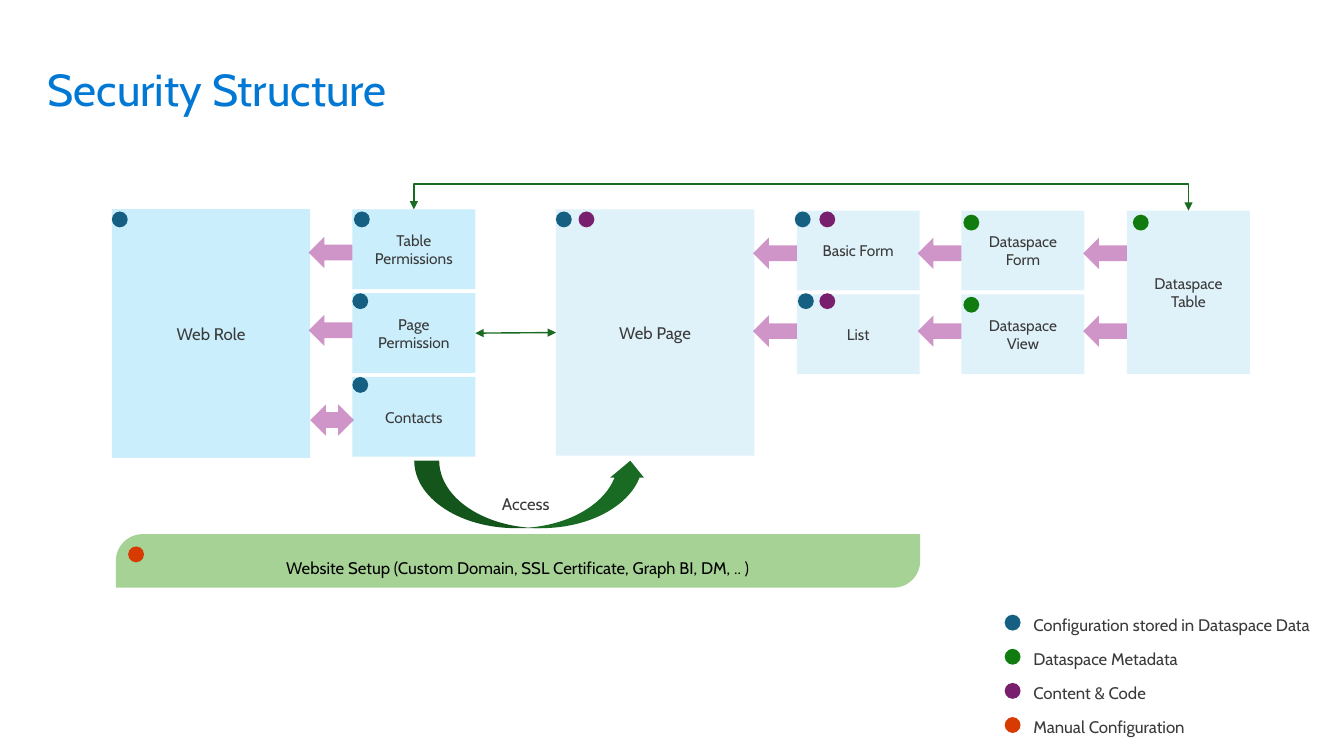
from dataclasses import dataclass

from lxml.etree import SubElement
from pptx import Presentation
from pptx.dml.color import RGBColor
from pptx.enum.shapes import MSO_CONNECTOR as Line, MSO_SHAPE as Preset
from pptx.enum.text import MSO_ANCHOR as Anchor, PP_ALIGN as Align
from pptx.oxml.ns import qn
from pptx.util import Cm, Pt


@dataclass(frozen=True)
class Theme:
    font: str = "Cabin"
    title: str = "0078D4"
    text: str = "3A3A3A"
    black: str = "000000"
    role: str = "CAEEFB"
    page: str = "C1E5F5"
    arrow: str = "A02B93"
    link: str = "196B24"
    setup: str = "4EA72E"
    title_size: int = 32
    large_size: int = 12
    small_size: int = 11


THEME = Theme()

TITLE = "Security Structure"
ACCESS = "Access"
SETUP = "Website Setup (Custom Domain, SSL Certificate, Graph BI, DM, .. )"

# Kind of storage: (dot colour, legend label)
STORAGE = {
    "data": ("156082", "Configuration stored in Dataspace Data"),
    "metadata": ("107C10", "Dataspace Metadata"),
    "content": ("78206E", "Content & Code"),
    "manual": ("D83B01", "Manual Configuration"),
}

# Lengths are in centimetres
SMALL_WIDTH, SMALL_HEIGHT, ROW_PITCH = 3.1, 2.01, 2.11
LARGE_WIDTH = 5.0
ROLE_TOP, PAGE_TOP = 5.28, 5.31
PERMISSION_X, FORM_X, SOURCE_X, TABLE_X = 8.88, 20.08, 24.23, 28.4
DOT = 0.4
ARROW_WIDTH, ARROW_HEIGHT = 1.1, 0.79

# Label, left, top, width, height, dots as (storage, right shift, down shift)
ROLE_BOXES = [
    ("Web Role", 2.82, 5.27, LARGE_WIDTH, 6.27, [("data", 0, 0.06)]),
    ("Table Permissions", PERMISSION_X, ROLE_TOP, SMALL_WIDTH, SMALL_HEIGHT,
     [("data", 0.04, 0.05)]),
    ("Page Permission", PERMISSION_X, ROLE_TOP + ROW_PITCH, SMALL_WIDTH, SMALL_HEIGHT,
     [("data", 0, 0)]),
    ("Contacts", PERMISSION_X, ROLE_TOP + 2 * ROW_PITCH, SMALL_WIDTH, SMALL_HEIGHT,
     [("data", 0, 0)]),
]
PAGE_BOXES = [
    ("Web Page", 14.01, ROLE_TOP, LARGE_WIDTH, 6.2,
     [("data", 0, 0.05), ("content", 0.57, 0.05)]),
    ("Basic Form", FORM_X, PAGE_TOP, SMALL_WIDTH, SMALL_HEIGHT,
     [("data", -0.05, 0.02), ("content", 0.57, 0.02)]),
    ("List", FORM_X, PAGE_TOP + ROW_PITCH, SMALL_WIDTH, SMALL_HEIGHT,
     [("data", 0.03, -0.03), ("content", 0.57, -0.03)]),
    ("Dataspace Form", SOURCE_X, PAGE_TOP, SMALL_WIDTH, SMALL_HEIGHT,
     [("metadata", 0.05, 0.1)]),
    ("Dataspace View", SOURCE_X, PAGE_TOP + ROW_PITCH, SMALL_WIDTH, SMALL_HEIGHT,
     [("metadata", 0.05, 0.06)]),
    ("Dataspace Table", TABLE_X, PAGE_TOP, SMALL_WIDTH, ROW_PITCH + SMALL_HEIGHT,
     [("metadata", 0.15, 0.1)]),
]
# Left edge of the box an arrow leaves, and the tops of its arrows
ARROWS = [
    (PERMISSION_X, (5.97, 7.93)),
    (FORM_X, (5.99, 7.95)),
    (SOURCE_X, (5.99, 7.95)),
    (TABLE_X, (5.99, 7.95)),
]
CONTACTS_ARROW_TOP = 10.19
SETUP_X, SETUP_Y, SETUP_WIDTH, SETUP_HEIGHT = 2.92, 13.46, 20.27, 1.35
LEGEND_X, LEGEND_Y, LEGEND_PITCH = 25.32, 15.49, 0.86
LINK_RISE = 0.64


def format_text(frame, text, size, color, align=Align.LEFT, anchor=Anchor.TOP, margins=(0, 0)):
    frame.text = text
    frame.word_wrap = True
    frame.vertical_anchor = anchor
    frame.margin_left = frame.margin_right = Cm(margins[0])
    frame.margin_top = frame.margin_bottom = Cm(margins[1])
    paragraph = frame.paragraphs[0]
    paragraph.alignment = align
    font = paragraph.runs[0].font
    font.name, font.size = THEME.font, Pt(size)
    font.color.rgb = RGBColor.from_string(color)


def add_filled(slide, preset, left, top, width, height, color, half_clear=False):
    shape = slide.shapes.add_shape(preset, Cm(left), Cm(top), Cm(width), Cm(height))
    shape.shadow.inherit = False
    shape.line.fill.background()
    shape.fill.solid()
    shape.fill.fore_color.rgb = RGBColor.from_string(color)
    if half_clear:
        rgb = shape.fill._xPr.find(qn("a:solidFill")).find(qn("a:srgbClr"))
        SubElement(rgb, qn("a:alpha"), val="50000")
    return shape


def add_box(slide, label, left, top, width, height, color, half_clear):
    box = add_filled(slide, Preset.RECTANGLE, left, top, width, height, color, half_clear)
    size = THEME.large_size if width == LARGE_WIDTH else THEME.small_size
    format_text(box.text_frame, label, size, THEME.text, Align.CENTER, Anchor.MIDDLE, (0.5, 0.41))
    return box


def add_dot(slide, storage, left, top):
    add_filled(slide, Preset.OVAL, left, top, DOT, DOT, STORAGE[storage][0])


def add_label(slide, text, left, top, width):
    box = slide.shapes.add_textbox(Cm(left), Cm(top), Cm(width), Cm(0.51))
    format_text(box.text_frame, text, THEME.large_size, THEME.text)


def add_link(slide, kind, start, start_side, end, end_side):
    """Join two boxes with a line that has an arrowhead at both ends."""
    link = slide.shapes.add_connector(kind, 0, 0, 0, 0)
    link.begin_connect(start, start_side)
    link.end_connect(end, end_side)
    link.line.width = Pt(1)
    link.line.color.rgb = RGBColor.from_string(THEME.link)
    properties = link._element.spPr
    for head in ("a:headEnd", "a:tailEnd"):
        SubElement(properties.find(qn("a:ln")), qn(head), type="triangle")
    SubElement(properties, qn("a:effectLst"))
    return link


def lift_link(link, start, end, rise):
    """Turn an elbow link on its side so that it runs above both boxes."""
    start_x, end_x = (box.left + box.width // 2 for box in (start, end))
    depth, span = start.top - end.top, start_x - end_x
    link.left = (start_x + end_x - depth) // 2
    link.top = (start.top + end.top - span) // 2
    link.width, link.height = depth, span
    frame = link._element.spPr.find(qn("a:xfrm"))
    frame.attrib.pop("flipH", None)
    frame.set("rot", "16200000")
    frame.set("flipV", "1")
    geometry = link._element.spPr.find(qn("a:prstGeom"))
    bend = round((rise + depth) / depth * 100000)
    SubElement(geometry.find(qn("a:avLst")), qn("a:gd"), name="adj1", fmla=f"val {bend}")


def main():
    presentation = Presentation()
    presentation.slide_width, presentation.slide_height = Cm(33.87), Cm(19.05)
    slide = presentation.slides.add_slide(presentation.slide_layouts[5])

    title = slide.shapes.title
    title.left, title.top, title.width, title.height = Cm(1.2), Cm(1.55), Cm(15.5), Cm(1.37)
    format_text(title.text_frame, TITLE, THEME.title_size, THEME.title)

    boxes = {}
    for group, color, half_clear in ((ROLE_BOXES, THEME.role, False), (PAGE_BOXES, THEME.page, True)):
        for label, *place, _ in group:
            boxes[label] = add_box(slide, label, *place, color, half_clear)

    for source_x, tops in ARROWS:
        for top in tops:
            add_filled(slide, Preset.LEFT_ARROW, source_x - ARROW_WIDTH, top,
                       ARROW_WIDTH, ARROW_HEIGHT, THEME.arrow, True)
    add_filled(slide, Preset.LEFT_RIGHT_ARROW, PERMISSION_X - ARROW_WIDTH + 0.04,
               CONTACTS_ARROW_TOP, ARROW_WIDTH, ARROW_HEIGHT, THEME.arrow, True)

    table, permissions = boxes["Dataspace Table"], boxes["Table Permissions"]
    table_link = add_link(slide, Line.ELBOW, table, 0, permissions, 0)
    lift_link(table_link, table, permissions, Cm(LINK_RISE))
    add_link(slide, Line.STRAIGHT, boxes["Page Permission"], 3, boxes["Web Page"], 1)

    access = add_filled(slide, Preset.CURVED_UP_ARROW, 10.44, 11.61, 5.87, 1.7, THEME.link)
    access.adjustments[0] = 0.37
    add_label(slide, ACCESS, 12.65, 12.45, 1.5)

    setup = add_filled(slide, Preset.ROUND_2_DIAG_RECTANGLE, SETUP_X, SETUP_Y,
                       SETUP_WIDTH, SETUP_HEIGHT, THEME.setup, True)
    setup.adjustments[0] = 0.5
    format_text(setup.text_frame, SETUP, THEME.large_size, THEME.black, Align.CENTER,
                margins=(0.5, 0.41))
    add_dot(slide, "manual", SETUP_X + 0.31, SETUP_Y + 0.31)

    for _, left, top, _, _, dots in ROLE_BOXES + PAGE_BOXES:
        for storage, right, down in dots:
            add_dot(slide, storage, left + right, top + down)

    for row, (storage, (_, label)) in enumerate(STORAGE.items()):
        top = LEGEND_Y + row * LEGEND_PITCH
        add_dot(slide, storage, LEGEND_X, top)
        add_label(slide, label, LEGEND_X + 0.72, top, 7.6)

    presentation.save("out.pptx")


if __name__ == "__main__":
    main()
